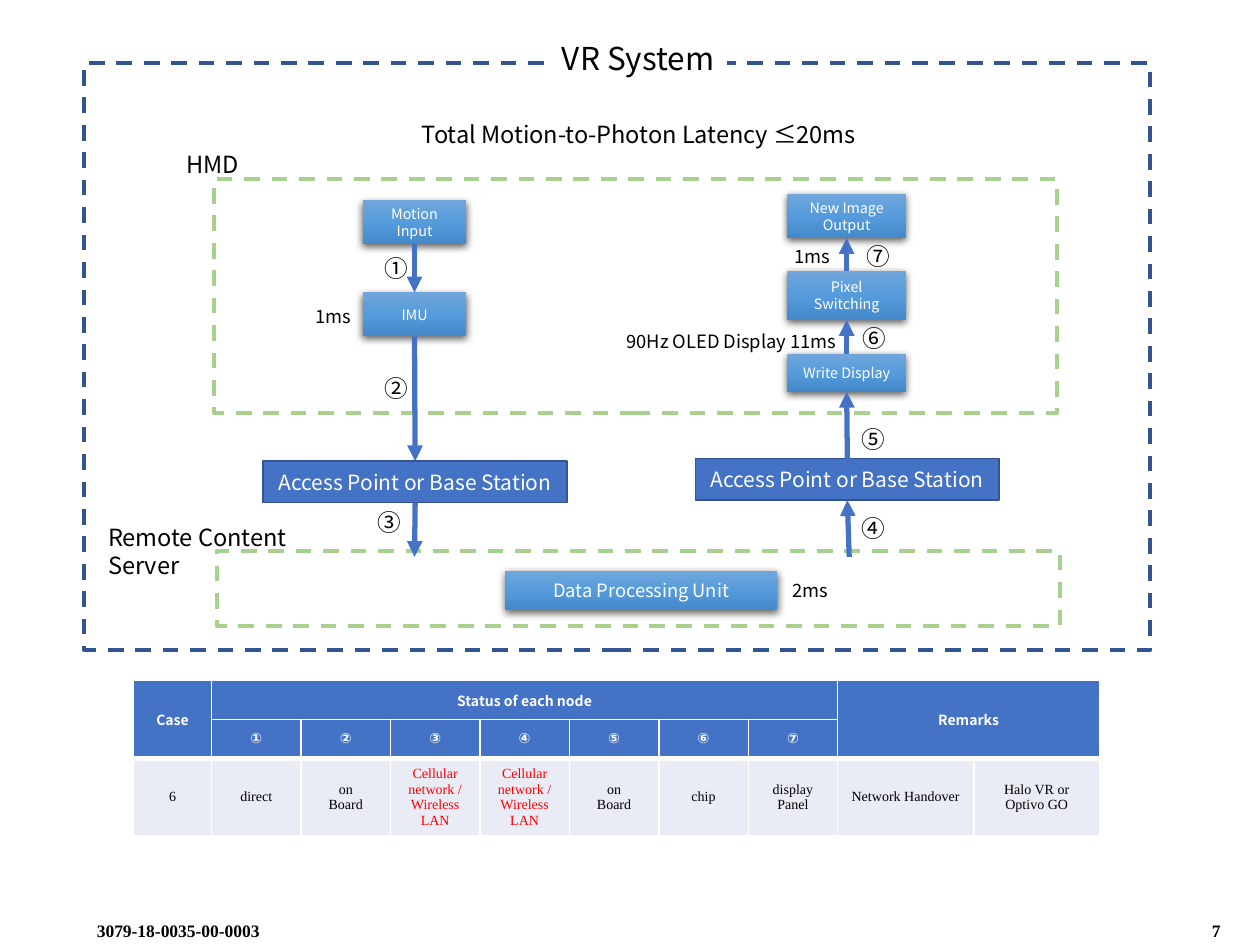
from dataclasses import dataclass

from lxml.etree import SubElement
from pptx import Presentation
from pptx.dml.color import RGBColor
from pptx.enum.dml import MSO_LINE
from pptx.enum.shapes import MSO_CONNECTOR, MSO_SHAPE
from pptx.enum.text import MSO_ANCHOR, MSO_AUTO_SIZE, PP_ALIGN
from pptx.oxml import parse_xml
from pptx.oxml.ns import nsdecls, qn
from pptx.shapes.autoshape import Shape
from pptx.shapes.connector import Connector
from pptx.table import Table, _Cell
from pptx.text.text import TextFrame
from pptx.util import Inches, Pt

BLACK = RGBColor(0x00, 0x00, 0x00)
WHITE = RGBColor(0xFF, 0xFF, 0xFF)
RED = RGBColor(0xFF, 0x00, 0x00)
BLUE = RGBColor(0x44, 0x72, 0xC4)
NAVY = RGBColor(0x32, 0x54, 0x91)
GREEN = RGBColor(0xA9, 0xD1, 0x8E)
PALE = RGBColor(0xE9, 0xEB, 0xF5)
NODE_GRADIENT = ((0, RGBColor(0x71, 0xA6, 0xDB)), (50, RGBColor(0x55, 0x9B, 0xDB)),
                 (100, RGBColor(0x44, 0x8A, 0xCA)))
SANS, SERIF, SYMBOL = "Noto Sans CJK KR", "Times New Roman", "DejaVu Sans"
BOTTOM, TOP = 2, 0


@dataclass(frozen=True)
class Box:
    left: float
    top: float
    width: float
    height: float
    text: str = ""
    size: float = 13.5


@dataclass(frozen=True)
class Label(Box):
    centered: bool = False
    wrap: bool = False
    font: str = SANS
    bold: bool = False
    fill: RGBColor | None = None


FRAMES = ((Box(1.7, 1.42, 6.69, 1.86), GREEN), (Box(0.67, 0.5, 8.46, 4.66), NAVY),
          (Box(1.72, 4.37, 6.69, 0.6), GREEN))
MOTION = Box(2.88, 1.59, 0.82, 0.35, "Motion\nInput", 8.2)
IMU = Box(2.88, 2.32, 0.82, 0.35, "IMU", 8.2)
WRITE = Box(6.25, 2.81, 0.94, 0.3, "Write Display", 8.2)
PIXEL = Box(6.25, 2.15, 0.94, 0.39, "Pixel\nSwitching", 8.2)
IMAGE = Box(6.25, 1.54, 0.94, 0.35, "New Image\nOutput", 8.2)
PROCESSING = Box(4.01, 4.53, 2.16, 0.31, "Data Processing Unit", 10.5)
UPLINK = Box(2.09, 3.66, 2.41, 0.33, "Access Point or Base Station", 12)
DOWNLINK = Box(5.52, 3.64, 2.41, 0.33, "Access Point or Base Station", 12)
LINKS = ((MOTION, BOTTOM, IMU, TOP), (IMU, BOTTOM, UPLINK, TOP), (DOWNLINK, TOP, WRITE, BOTTOM),
         (WRITE, TOP, PIXEL, BOTTOM), (PIXEL, TOP, IMAGE, BOTTOM))
SERVER_EDGE = 4.42

STEPS = "①②③④⑤⑥⑦"
STEP_PLACES = ((2.95, 1.97), (2.95, 2.92), (2.9, 3.98), (6.74, 4.03), (6.74, 3.32),
               (6.75, 2.52), (6.78, 1.87))
LABELS = (
    Label(0.67, 7.25, 5.25, 0.25, "3079-18-0035-00-0003", 10, font=SERIF, bold=True),
    Label(9.52, 7.25, 0.48, 0.25, "7", 10, font=SERIF, bold=True),
    Label(1.38, 1.14, 0.65, 0.33, "HMD"),
    Label(2.82, 0.9, 4.5, 0.33, "Total Motion-to-Photon Latency ≤20ms", centered=True, wrap=True),
    Label(4.36, 0.26, 1.41, 0.4, "VR System", 18, centered=True, fill=WHITE),
    Label(0.76, 4.1, 2.1, 0.33, "Remote Content Server", wrap=True),
    Label(6.08, 1.9, 0.73, 0.28, "1ms", 10.5, centered=True, wrap=True),
    Label(4.86, 2.57, 1.89, 0.28, "90Hz OLED Display 11ms", 10.5, centered=True),
    Label(6.17, 4.55, 0.52, 0.28, "2ms", 10.5, centered=True, wrap=True),
    Label(2.28, 2.37, 0.73, 0.28, "1ms", 10.5, centered=True, wrap=True),
    *(Label(x, y, 0.39, 0.33, step) for step, (x, y) in zip(STEPS, STEP_PLACES)),
)

COLUMNS = (0.62, *[0.71] * 7, 1.08, 1.0)
ROWS = (0.31, 0.31, 0.54)
NETWORK = "Cellular network /\nWireless\nLAN"
CASE = ("6", "direct", "on\nBoard", NETWORK, NETWORK, "on\nBoard", "chip", "display\nPanel",
        "Network Handover", "Halo VR or\nOptivo GO")


def place(box: Box) -> tuple[int, ...]:
    return tuple(Inches(v) for v in (box.left, box.top, box.width, box.height))


def write(frame: TextFrame, text: str, size: float, color: RGBColor, font: str = SANS,
          bold: bool = False, centered: bool = True) -> None:
    for i, line in enumerate(text.split("\n")):
        paragraph = frame.add_paragraph() if i else frame.paragraphs[0]
        paragraph.alignment = PP_ALIGN.CENTER if centered else PP_ALIGN.LEFT
        run = paragraph.add_run()
        run.text = line
        run.font.size, run.font.bold, run.font.name = Pt(size), bold, font
        run.font.color.rgb = color
        SubElement(run.font._element, qn("a:ea")).set("typeface", font)


def add_rectangle(slide, box: Box) -> Shape:
    shape = slide.shapes.add_shape(MSO_SHAPE.RECTANGLE, *place(box))
    shape.shadow.inherit = False
    shape.fill.background()
    shape.line.fill.background()
    if box.text:
        shape.text_frame.word_wrap = False
        shape.text_frame.vertical_anchor = MSO_ANCHOR.MIDDLE
        write(shape.text_frame, box.text, box.size, WHITE)
    return shape


def add_frame(slide, box: Box, color: RGBColor) -> None:
    line = add_rectangle(slide, box).line
    line.color.rgb, line.width, line.dash_style = color, Pt(2.25), MSO_LINE.DASH


def add_node(slide, box: Box) -> Shape:
    """Gradient box with a soft shadow below it."""
    shape = add_rectangle(slide, box)
    stops = "".join(f'<a:gs pos="{pos * 1000}"><a:srgbClr val="{color}"/></a:gs>'
                    for pos, color in NODE_GRADIENT)
    properties = shape._element.spPr
    properties.replace(properties.find(qn("a:noFill")), parse_xml(
        f'<a:gradFill {nsdecls("a")} rotWithShape="1"><a:gsLst>{stops}</a:gsLst>'
        '<a:lin ang="5400000" scaled="0"/></a:gradFill>'))
    properties.find(qn("a:effectLst")).append(parse_xml(
        f'<a:outerShdw {nsdecls("a")} blurRad="{Pt(4.5)}" dist="{Pt(1.5)}" dir="5400000" '
        'algn="ctr" rotWithShape="0"><a:srgbClr val="000000"><a:alpha val="63000"/>'
        '</a:srgbClr></a:outerShdw>'))
    return shape


def add_station(slide, box: Box) -> Shape:
    shape = add_rectangle(slide, box)
    shape.fill.solid()
    shape.fill.fore_color.rgb = BLUE
    shape.line.color.rgb, shape.line.width = NAVY, Pt(1)
    return shape


def add_arrow(slide, x: float, start: float, end: float) -> Connector:
    arrow = slide.shapes.add_connector(MSO_CONNECTOR.STRAIGHT, Inches(x), Inches(start),
                                       Inches(x), Inches(end))
    arrow.line.color.rgb, arrow.line.width = BLUE, Pt(3)
    SubElement(arrow.line._get_or_add_ln(), qn("a:tailEnd")).set("type", "triangle")
    SubElement(arrow._element.spPr, qn("a:effectLst"))
    return arrow


def add_label(slide, label: Label) -> None:
    shape = slide.shapes.add_textbox(*place(label))
    if label.fill is not None:
        shape.fill.solid()
        shape.fill.fore_color.rgb = label.fill
    shape.text_frame.word_wrap = label.wrap
    shape.text_frame.auto_size = MSO_AUTO_SIZE.SHAPE_TO_FIT_TEXT
    write(shape.text_frame, label.text, label.size, BLACK, label.font, label.bold, label.centered)


def style_cell(cell: _Cell, row: int, column: int) -> None:
    cell.fill.solid()
    cell.fill.fore_color.rgb = PALE if row == 2 else BLUE
    cell.vertical_anchor = MSO_ANCHOR.MIDDLE
    narrow = row == 2 and column >= 8
    cell.margin_left = cell.margin_right = Inches(0.05 if narrow else 0.07)
    cell.margin_top = cell.margin_bottom = Inches(0.01 if narrow else 0.04)
    widths = {"lnL": 1, "lnR": 1, "lnT": 3 if row == 2 else 1, "lnB": 3 if row == 1 else 1}
    for i, (side, width) in enumerate(widths.items()):
        cell._tc.get_or_add_tcPr().insert(i, parse_xml(
            f'<a:{side} {nsdecls("a")} w="{Pt(width)}"><a:solidFill><a:srgbClr val="{WHITE}"/>'
            f'</a:solidFill></a:{side}>'))


def add_status_table(slide) -> None:
    table: Table = slide.shapes.add_table(
        len(ROWS), len(COLUMNS), Inches(1.06), Inches(5.4),
        Inches(sum(COLUMNS)), Inches(sum(ROWS))).table
    table.horz_banding = False
    for column, width in zip(table.columns, COLUMNS):
        column.width = Inches(width)
    for r, height in enumerate(ROWS):
        table.rows[r].height = Inches(height)
        for c in range(len(COLUMNS)):
            style_cell(table.cell(r, c), r, c)
    for first, last, heading in (((0, 0), (1, 0), "Case"), ((0, 1), (0, 7), "Status of each node"),
                                 ((0, 8), (1, 9), "Remarks")):
        table.cell(*first).merge(table.cell(*last))
        write(table.cell(*first).text_frame, heading, 8, WHITE, bold=True)
    for c, step in enumerate(STEPS, start=1):
        write(table.cell(1, c).text_frame, step, 8, WHITE, SYMBOL, bold=True)
    for c, status in enumerate(CASE):
        write(table.cell(2, c).text_frame, status, 8, RED if status == NETWORK else BLACK, SERIF)


def main() -> None:
    deck = Presentation()
    deck.slide_width, deck.slide_height = Inches(10), Inches(7.5)
    slide = deck.slides.add_slide(deck.slide_layouts[6])
    for box, color in FRAMES:
        add_frame(slide, box, color)
    shapes = {box: add_node(slide, box) for box in (MOTION, IMU, WRITE, PIXEL, IMAGE, PROCESSING)}
    shapes |= {box: add_station(slide, box) for box in (UPLINK, DOWNLINK)}
    for source, source_side, target, target_side in LINKS:
        arrow = add_arrow(slide, source.left, source.top, target.top)
        arrow.begin_connect(shapes[source], source_side)
        arrow.end_connect(shapes[target], target_side)
    add_arrow(slide, 3.29, UPLINK.top, SERVER_EDGE).begin_connect(shapes[UPLINK], BOTTOM)
    add_arrow(slide, 6.74, SERVER_EDGE, DOWNLINK.top).end_connect(shapes[DOWNLINK], BOTTOM)
    for label in LABELS:
        add_label(slide, label)
    add_status_table(slide)
    deck.save("out.pptx")


if __name__ == "__main__":
    main()
